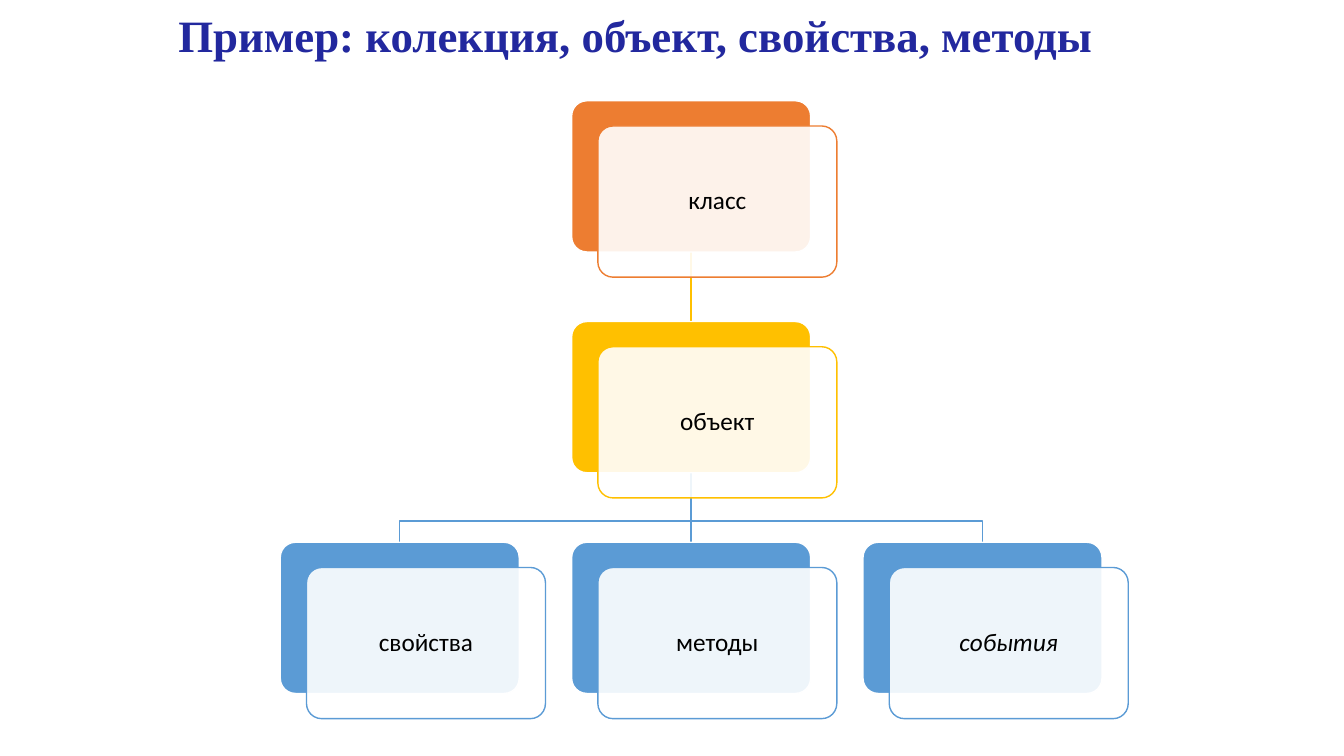
"""Builds a slide with a hierarchy of class, object and its members."""
from lxml import etree
from pptx import Presentation
from pptx.dml.color import RGBColor
from pptx.enum import shapes, text
from pptx.oxml import ns
from pptx.util import Inches, Pt

NAVY = RGBColor(0x22, 0x28, 0x9E)
ORANGE = RGBColor(0xED, 0x7D, 0x31)
GOLD = RGBColor(0xFF, 0xC0, 0x00)
BLUE = RGBColor(0x5B, 0x9B, 0xD5)
WHITE = RGBColor(0xFF, 0xFF, 0xFF)
BLACK = RGBColor(0, 0, 0)

CARD_W, CARD_H = 2.37, 1.5
COLUMN_STEP, ROW_STEP = 2.89, 2.19
OFFSET = 0.25
BEND = 0.21

# Label, column, row, colour, italic
NODES = [
    ("класс", 1, 0, ORANGE, False),
    ("объект", 1, 1, GOLD, False),
    ("свойства", 0, 2, BLUE, False),
    ("методы", 1, 2, BLUE, False),
    ("события", 2, 2, BLUE, True),
]
# Parent column, parent row, child column, colour
LINKS = [(1, 1, 2, BLUE), (1, 1, 1, BLUE), (1, 1, 0, BLUE), (1, 0, 1, GOLD)]


def add_title(slide, left, top, width, height):
    """Place the heading in the given box."""
    heading = slide.shapes.add_textbox(*map(Inches, (left, top, width, height)))
    frame = heading.text_frame
    frame.word_wrap = True
    frame.vertical_anchor = text.MSO_ANCHOR.MIDDLE
    line = frame.paragraphs[0]
    line.text = "Пример: колекция, oбъект, свойства, методы"
    line.line_spacing = 0.9
    line.font.name = "Times New Roman"
    line.font.size = Pt(32)
    line.font.bold = True
    line.font.color.rgb = NAVY


def add_plate(slide, left, top, fill, outline):
    """Draw one rounded plate of a card and return it."""
    plate = slide.shapes.add_shape(
        shapes.MSO_SHAPE.ROUNDED_RECTANGLE,
        *map(Inches, (left, top, CARD_W, CARD_H)))
    plate.adjustments[0] = 0.1
    plate.shadow.inherit = False
    plate.fill.solid()
    plate.fill.fore_color.rgb = fill
    plate.line.color.rgb = outline
    plate.line.width = Pt(1)
    return plate


def add_card(slide, left, top, label, colour, italic):
    """Draw a coloured plate with a translucent labelled plate over it."""
    add_plate(slide, left, top, colour, WHITE)
    front = add_plate(slide, left + OFFSET + 0.01, top + OFFSET, WHITE, colour)
    tint = front.fill._xPr.find(ns.qn("a:solidFill"))[0]
    etree.SubElement(tint, ns.qn("a:alpha"), val="90000")
    frame = front.text_frame
    frame.word_wrap = True
    frame.vertical_anchor = text.MSO_ANCHOR.MIDDLE
    line = frame.paragraphs[0]
    line.text = label
    line.alignment = text.PP_ALIGN.CENTER
    line.line_spacing = 0.9
    line.font.name = "Calibri"
    line.font.size = Pt(18)
    line.font.italic = italic
    line.font.color.rgb = BLACK


def add_link(slide, start_x, start_y, end_x, end_y, colour):
    """Join a parent to a child, with a bend when their columns differ."""
    if start_x == end_x:
        link = slide.shapes.add_connector(
            shapes.MSO_CONNECTOR.STRAIGHT,
            *map(Inches, (start_x, start_y, end_x, end_y)))
        etree.SubElement(link._element.spPr, ns.qn("a:effectLst"))
    else:
        bend_y = end_y - BEND
        outline = slide.shapes.build_freeform(Inches(start_x), Inches(start_y))
        corners = [(start_x, bend_y), (end_x, bend_y), (end_x, end_y)]
        outline.add_line_segments(
            [(Inches(x), Inches(y)) for x, y in corners], close=False)
        link = outline.convert_to_shape()
        link.shadow.inherit = False
        link.fill.background()
    link.line.color.rgb = colour
    link.line.width = Pt(1)


def add_hierarchy(slide, left, top):
    """Draw the links and then the cards on a grid from the given corner."""
    def corner(column, row):
        return left + column * COLUMN_STEP, top + row * ROW_STEP

    for parent_column, parent_row, child_column, colour in LINKS:
        parent_x, parent_y = corner(parent_column, parent_row)
        child_x, child_y = corner(child_column, parent_row + 1)
        add_link(slide, parent_x + CARD_W / 2, parent_y + CARD_H,
                 child_x + CARD_W / 2, child_y, colour)
    for label, column, row, colour, italic in NODES:
        add_card(slide, *corner(column, row), label, colour, italic)


def main():
    """Build the slide and save it."""
    deck = Presentation()
    deck.slide_width, deck.slide_height = Inches(13.33), Inches(7.5)
    slide = deck.slides.add_slide(deck.slide_layouts[6])
    add_title(slide, 1.67, 0, 10, 0.76)
    add_hierarchy(slide, 2.78, 1)
    deck.save("out.pptx")


if __name__ == "__main__":
    main()
